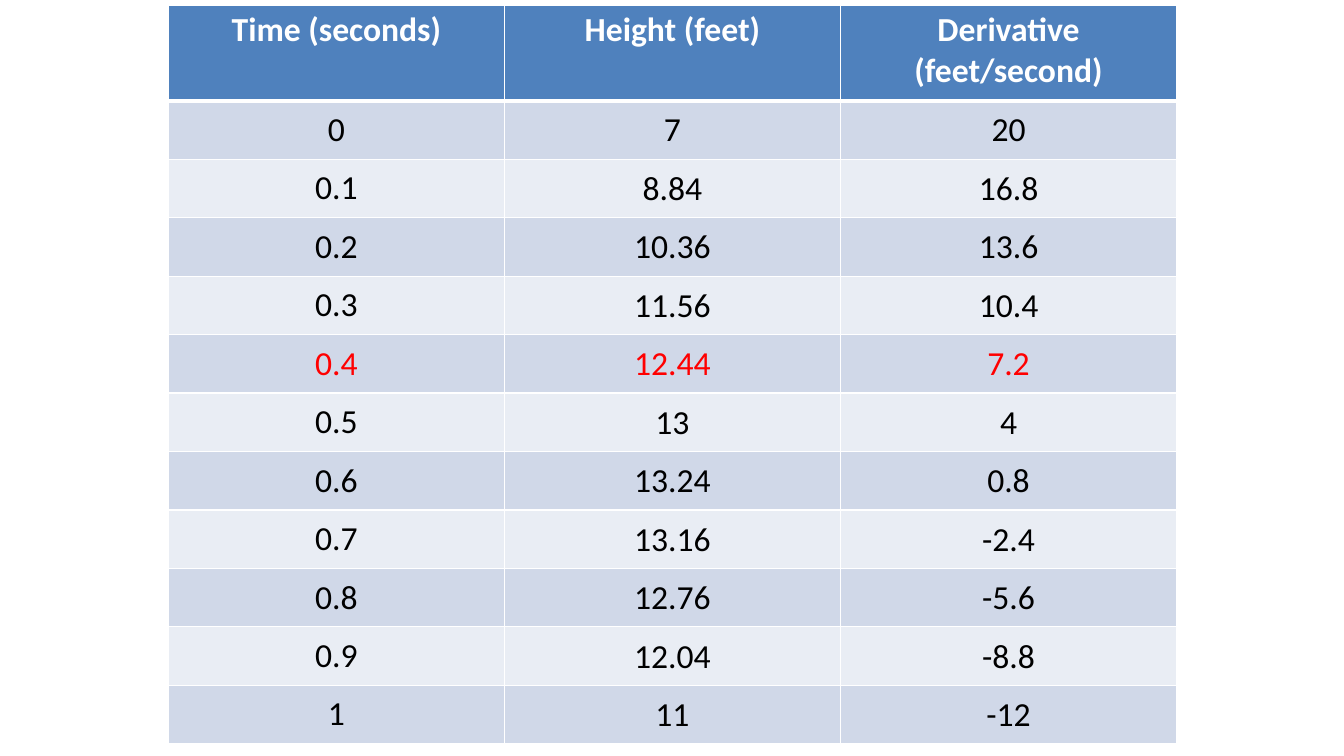
from pptx import Presentation
from pptx.dml.color import RGBColor
from pptx.enum.text import MSO_ANCHOR as Anchor, PP_ALIGN as Align
from pptx.oxml import parse_xml
from pptx.oxml.ns import nsdecls
from pptx.util import Inches, Pt


def color(code):
    return RGBColor.from_string(code)


def edge(cell, side, width):
    cell._tc.get_or_add_tcPr().append(parse_xml(
        f'<a:ln{side} {nsdecls("a")} w="{Pt(width)}"><a:solidFill>'
        f'<a:srgbClr val="FFFFFF"/></a:solidFill></a:ln{side}>'))


heads = ["Time (seconds)", "Height (feet)", "Derivative (feet/second)"]
data = [
    ["0", "7", "20"],
    ["0.1", "8.84", "16.8"],
    ["0.2", "10.36", "13.6"],
    ["0.3", "11.56", "10.4"],
    ["0.4", "12.44", "7.2"],
    ["0.5", "13", "4"],
    ["0.6", "13.24", "0.8"],
    ["0.7", "13.16", "-2.4"],
    ["0.8", "12.76", "-5.6"],
    ["0.9", "12.04", "-8.8"],
    ["1", "11", "-12"],
]
rows = [heads] + data
marked = "0.4"

# Slide
prs = Presentation()
prs.slide_width, prs.slide_height = Inches(13.33), Inches(7.5)
slide = prs.slides.add_slide(prs.slide_layouts[6])

# Table grid
table = slide.shapes.add_table(
    len(rows), len(heads), Inches(1.67), Inches(0.05), Inches(10), Inches(7.35)).table
for col in table.columns:
    col.width = Inches(10 / 3)
for i, row in enumerate(table.rows):
    row.height = Inches(0.58 if i else 0.95)

# Cells
for i, row in enumerate(rows):
    for j, text in enumerate(row):
        cell = table.cell(i, j)

        # Borders, with a thick rule under the header
        for side in "LR":
            edge(cell, side, 1)
        edge(cell, "T", 3 if i == 1 else 1)
        edge(cell, "B", 3 if i == 0 else 1)

        # Banded fill
        cell.fill.solid()
        band = "D0D8E8" if i % 2 else "E9EDF4"
        cell.fill.fore_color.rgb = color(band if i else "4F81BD")

        # Placing of the text
        if i:
            cell.vertical_anchor = Anchor.MIDDLE
            if j:
                cell.margin_left = cell.margin_right = cell.margin_top = Inches(0.01)
                cell.margin_bottom = 0

        # Text
        cell.text = text
        para = cell.text_frame.paragraphs[0]
        para.alignment = Align.CENTER
        font = para.font
        font.name, font.size, font.bold = "Calibri", Pt(24), i == 0
        ink = "FF0000" if row[0] == marked else "000000"
        font.color.rgb = color(ink if i else "FFFFFF")

prs.save("out.pptx")
